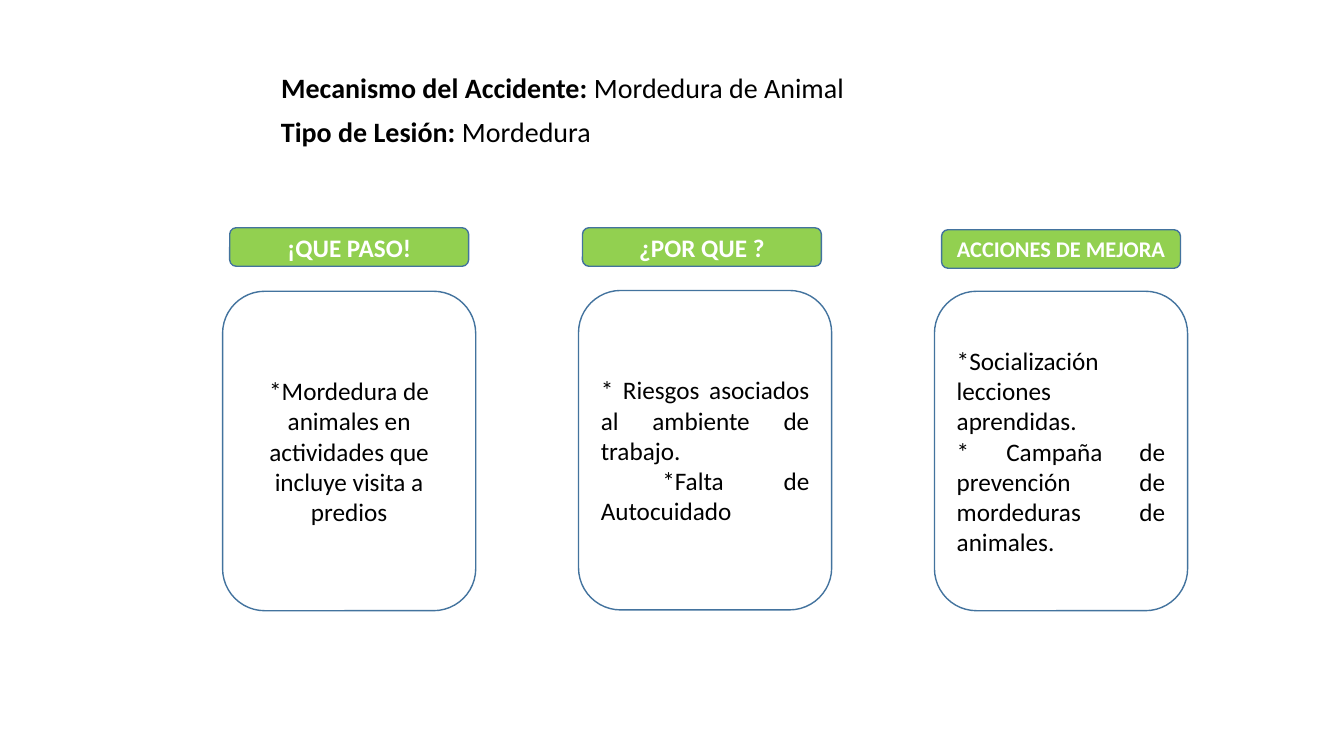
from pptx import Presentation
from pptx.dml.color import RGBColor
from pptx.enum.shapes import MSO_SHAPE
from pptx.enum.text import MSO_ANCHOR, MSO_AUTO_SIZE, PP_ALIGN
from pptx.util import Cm, Pt

ROUNDED = MSO_SHAPE.ROUNDED_RECTANGLE
TOP, MIDDLE = MSO_ANCHOR.TOP, MSO_ANCHOR.MIDDLE
LEFT, CENTER, JUSTIFY = PP_ALIGN.LEFT, PP_ALIGN.CENTER, PP_ALIGN.JUSTIFY
NO_FIT = MSO_AUTO_SIZE.NONE

FONT = "Calibri"
BLACK, WHITE, GREEN, BLUE = "000000", "FFFFFF", "92D050", "43739E"

COLUMN_LEFT, COLUMN_PITCH = 5.61, 8.97
CARD_WIDTH, CARD_HEIGHT = 6.38, 8.05
HEADER_WIDTH, HEADER_HEIGHT = 6.02, 0.97

# header, header size, header (dx, top), card top, alignment, [(paragraph, first-line indent)]
COLUMNS = [
    ("¡QUE PASO!", 18, (0.18, 5.74), 7.34, CENTER,
     [("*Mordedura de animales en actividades que incluye visita a predios", 0)]),
    ("¿POR QUE ?", 18, (0.1, 5.74), 7.32, JUSTIFY,
     [("* Riesgos asociados al ambiente de trabajo.", 0),
      ("*Falta de Autocuidado", 1.55)]),
    ("ACCIONES DE MEJORA", 16, (0.18, 5.79), 7.34, JUSTIFY,
     [("*Socialización lecciones aprendidas.", 0),
      ("* Campaña de prevención de mordeduras de animales.", 0)]),
]


def rgb(color):
    return RGBColor.from_string(color)


def format_run(r, size, color, bold=False):
    r.font.name = FONT
    r.font.size = Pt(size)
    r.font.bold = bold
    r.font.color.rgb = rgb(color)


def fill_heading(s, left, top, width, label, value):
    """Place a one-line heading with a bold label and a plain value."""
    s.left, s.top, s.width, s.height = Cm(left), Cm(top), Cm(width), Cm(1.12)
    tf = s.text_frame
    tf.word_wrap = True
    tf.auto_size = NO_FIT
    tf.vertical_anchor = TOP
    p = tf.paragraphs[0]
    p.alignment = LEFT
    for text, bold in ((label + " ", True), (value, False)):
        r = p.add_run()
        r.text = text
        format_run(r, 20, BLACK, bold)


def add_headings(slide, left, top):
    fill_heading(slide.shapes.title, left, top, 17.5,
                 "Mecanismo del Accidente:", "Mordedura de Animal")
    s = slide.shapes.add_textbox(0, 0, 0, 0)
    fill_heading(s, left, top + 1.1, 26.49, "Tipo de Lesión:", "Mordedura")


def add_rounded_box(slide, left, top, width, height, fill, paragraphs,
                    alignment, size, color, bold=False):
    s = slide.shapes.add_shape(ROUNDED, Cm(left), Cm(top), Cm(width), Cm(height))
    s.shadow.inherit = False
    s.fill.solid()
    s.fill.fore_color.rgb = rgb(fill)
    s.line.color.rgb = rgb(BLUE)
    s.line.width = Pt(1)
    tf = s.text_frame
    tf.word_wrap = True
    tf.vertical_anchor = MIDDLE
    tf.text = "\n".join(text for text, _ in paragraphs)
    for p, (_, indent) in zip(tf.paragraphs, paragraphs):
        p.alignment = alignment
        if indent:
            p._p.get_or_add_pPr().set("indent", str(Cm(indent)))
        format_run(p.runs[0], size, color, bold)


def add_column(slide, left, header, header_size, header_offset, card_top,
               alignment, paragraphs):
    dx, header_top = header_offset
    add_rounded_box(slide, left, card_top, CARD_WIDTH, CARD_HEIGHT, WHITE,
                    paragraphs, alignment, 18, BLACK)
    add_rounded_box(slide, left + dx, header_top, HEADER_WIDTH, HEADER_HEIGHT,
                    GREEN, [(header, 0)], CENTER, header_size, WHITE, True)


def main():
    prs = Presentation()
    prs.slide_width, prs.slide_height = Cm(33.87), Cm(19.05)
    slide = prs.slides.add_slide(prs.slide_layouts[5])
    add_headings(slide, 6.83, 1.65)
    for i, column in enumerate(COLUMNS):
        add_column(slide, COLUMN_LEFT + i * COLUMN_PITCH, *column)
    prs.save("out.pptx")


if __name__ == "__main__":
    main()
